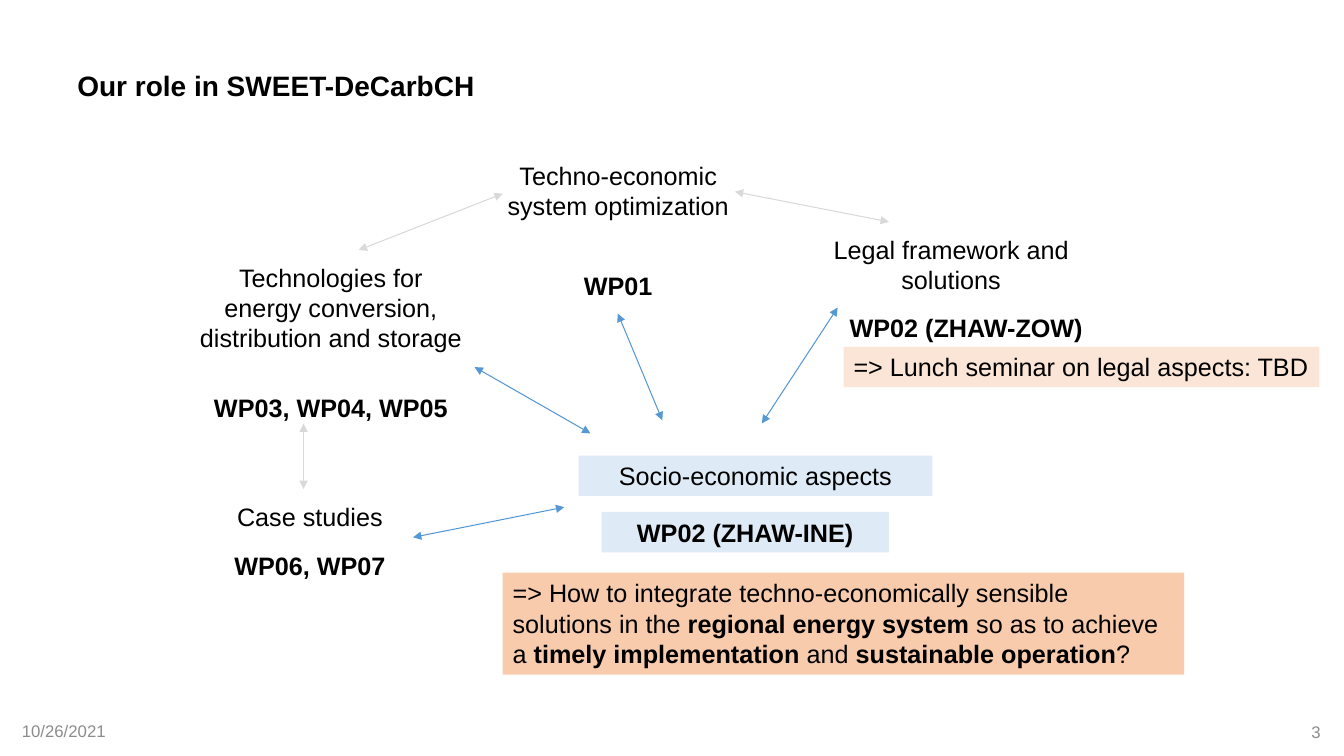
import pptx
import pptx.util
import pptx.dml.color
import pptx.enum.shapes
import pptx.enum.text
import pptx.oxml.ns
import lxml.etree

Cm, Pt = pptx.util.Cm, pptx.util.Pt
RGB = pptx.dml.color.RGBColor
ALIGN = pptx.enum.text.PP_ALIGN
ANCHOR = pptx.enum.text.MSO_ANCHOR

BLACK = RGB(0x00, 0x00, 0x00)
GREY = RGB(0x8C, 0x8C, 0x8C)
PALE = RGB(0xD9, 0xD9, 0xD9)
BLUE = RGB(0x56, 0x98, 0xD3)
SKY = RGB(0xDE, 0xEB, 0xF7)
PEACH = RGB(0xF8, 0xCB, 0xAD)
CREAM = RGB(0xFB, 0xE5, 0xD6)

ROW = 1.02   # height of a one-line box
WIDE = 7.24  # width of a topic box

deck = pptx.Presentation()
deck.slide_width, deck.slide_height = Cm(33.87), Cm(19.05)
slide = deck.slides.add_slide(deck.slide_layouts[6])


def label(text, left, top, width=WIDE, height=ROW, fill=None, size=18,
          color=BLACK, align=ALIGN.CENTER, anchor=ANCHOR.TOP):
    """Add a text box, or a filled rectangle; ** switches bold on and off."""
    place = Cm(left), Cm(top), Cm(width), Cm(height)
    if fill is None:
        box = slide.shapes.add_textbox(*place)
    else:
        box = slide.shapes.add_shape(
            pptx.enum.shapes.MSO_SHAPE.RECTANGLE, *place)
        box.shadow.inherit = False
        box.fill.solid()
        box.fill.fore_color.rgb = fill
        box.line.fill.background()
    frame = box.text_frame
    for key, value in {"word_wrap": True, "vertical_anchor": anchor}.items():
        setattr(frame, key, value)
    para = frame.paragraphs[0]
    para.alignment = align
    for i, part in enumerate(text.split("**")):
        if part:
            run = para.add_run()
            run.text = part
            style = {"name": "Arial", "size": Pt(size), "bold": i % 2 == 1}
            for key, value in style.items():
                setattr(run.font, key, value)
            run.font.color.rgb = color


# Title and footer
label("**Our role in SWEET-DeCarbCH**", 1.7, 0.56, 26.04, 3.18, size=20,
      align=ALIGN.LEFT, anchor=ANCHOR.MIDDLE)
for text, left, top, align in [("10/26/2021", 0.3, 17.91, ALIGN.LEFT),
                               ("3", 25.91, 17.93, ALIGN.RIGHT)]:
    label(text, left, top, 7.62, size=12, color=GREY, align=align,
          anchor=ANCHOR.MIDDLE)

# Topics and their work packages
label("Technologies for energy conversion, distribution and storage",
      4.72, 6.48, height=2.57)
label("**WP03, WP04, WP05**", 4.72, 9.75)
label("Techno-economic system optimization", 11.96, 3.91, height=1.8)
label("**WP01**", 11.96, 6.68)
label("Legal framework and solutions", 20.35, 5.77, height=1.8)
label("**WP02 (ZHAW-ZOW)**", 20.73, 7.75)
label("Case studies", 4.19, 12.52)
label("**WP06, WP07**", 4.19, 13.74)
label("Socio-economic aspects", 14.58, 11.48, 8.92, fill=SKY)
label("**WP02 (ZHAW-INE)**", 15.16, 12.9, fill=SKY)

# Double-headed arrows: blue from our topic, pale between the others
links = [
    (BLUE, 19.2, 10.67, 21.11, 7.75),
    (BLUE, 16.69, 10.59, 15.57, 7.9),
    (BLUE, 14.88, 10.92, 11.96, 9.25),
    (BLUE, 14.22, 12.78, 10.41, 13.54),
    (PALE, 12.67, 4.88, 9.04, 6.3),
    (PALE, 22.4, 5.59, 18.52, 4.83),
    (PALE, 7.65, 10.67, 7.65, 12.32),
]
qn = pptx.oxml.ns.qn
for color, *ends in links:
    link = slide.shapes.add_connector(
        pptx.enum.shapes.MSO_CONNECTOR.STRAIGHT, *map(Cm, ends))
    link.line.color.rgb = color
    link.line.width = Pt(0.75)
    props = link._element.spPr
    for tag in ("a:headEnd", "a:tailEnd"):
        lxml.etree.SubElement(props.find(qn("a:ln")), qn(tag), type="triangle")
    lxml.etree.SubElement(props, qn("a:effectLst"))

# Key question and seminar note
label("=> How to integrate techno-economically sensible solutions in the "
      "**regional energy system **so as to achieve a "
      "**timely implementation** and **sustainable operation**?",
      12.67, 14.43, 17.17, 2.57, fill=PEACH, align=ALIGN.LEFT)
label("=> Lunch seminar on legal aspects: TBD", 21.26, 8.74, 11.99,
      fill=CREAM, align=ALIGN.LEFT)

deck.save("out.pptx")
